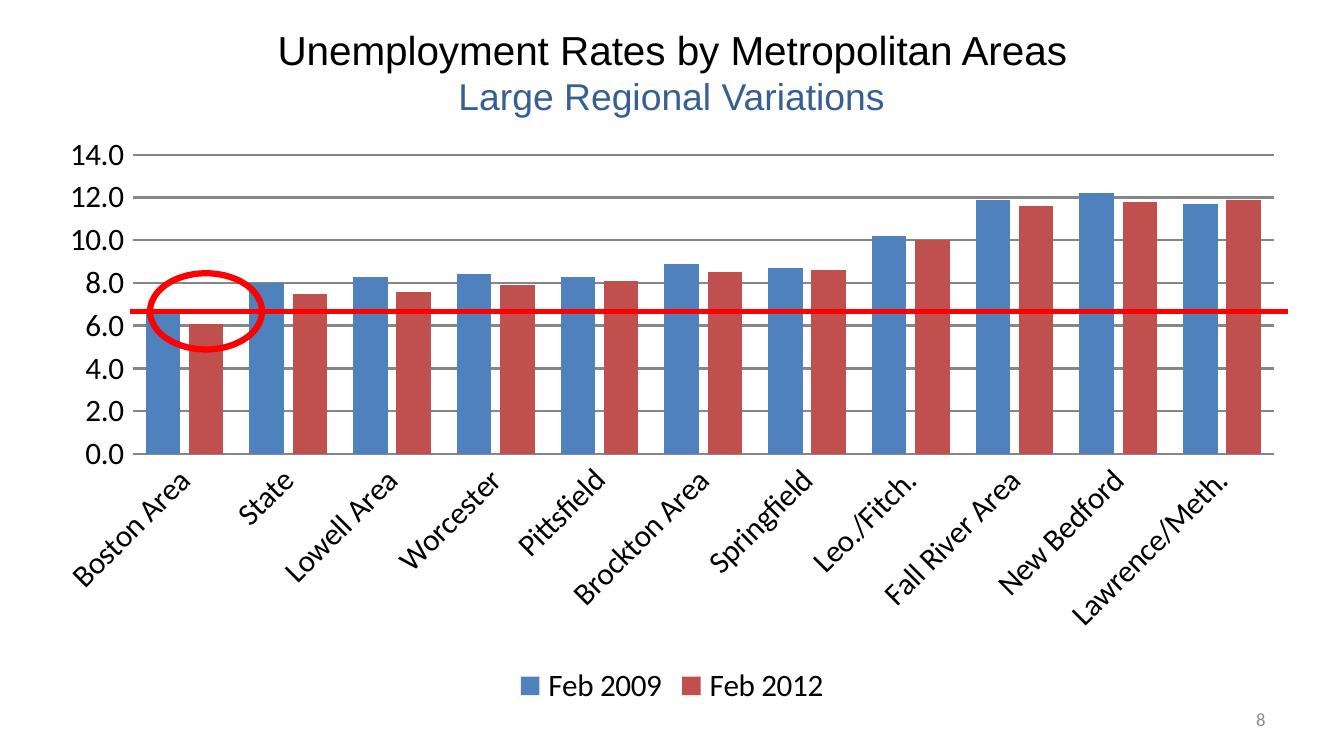
"""Build a slide comparing unemployment rates by metropolitan area."""
from lxml import etree
from pptx import Presentation
from pptx.chart.data import CategoryChartData as Data
from pptx.dml.color import RGBColor
from pptx.enum.chart import XL_CHART_TYPE as Kind, XL_LEGEND_POSITION as Spot
from pptx.enum.chart import XL_TICK_MARK as Tick
from pptx.enum.shapes import MSO_CONNECTOR as Link, MSO_SHAPE as Form
from pptx.enum.text import MSO_ANCHOR as Anchor, PP_ALIGN as Align
from pptx.oxml import parse_xml
from pptx.oxml.ns import nsdecls, qn
from pptx.util import Pt

SIZE = (432, 242.64)
TITLE = [("Unemployment Rates by Metropolitan Areas", 13, "000000"),
         ("Large Regional Variations", 12, "376092")]
PAGE = [("8", 6, "8C8C8C")]
RATES = [
    ("Boston Area", 6.8, 6.1),
    ("State", 8.0, 7.5),
    ("Lowell Area", 8.3, 7.6),
    ("Worcester", 8.4, 7.9),
    ("Pittsfield", 8.3, 8.1),
    ("Brockton Area", 8.9, 8.5),
    ("Springfield", 8.7, 8.6),
    ("Leo./Fitch.", 10.2, 10.0),
    ("Fall River Area", 11.9, 11.6),
    ("New Bedford", 12.2, 11.8),
    ("Lawrence/Meth.", 11.7, 11.9),
]
YEARS = [("Feb 2009", "4F81BD"), ("Feb 2012", "C0504D")]
PLOT = {"x": 0.07, "y": 0.05, "w": 0.91, "h": 0.51}
RED, GRID = "FF0000", "868686"


def color(hue):
    return RGBColor.from_string(hue)


def pts(*nums):
    return [Pt(num) for num in nums]


def stroke(line, hue, width):
    line.color.rgb = color(hue)
    line.width = Pt(width)


def style(font, face, size, hue):
    font.name, font.size = face, Pt(size)
    font.color.rgb = color(hue)


def write(slide, text, box, face="Calibri", align=Align.CENTER):
    frame = slide.shapes.add_textbox(*pts(*box)).text_frame
    frame.word_wrap = True
    frame.vertical_anchor = Anchor.MIDDLE
    frame.margin_left = frame.margin_right = Pt(3.6)
    frame.margin_top = frame.margin_bottom = Pt(2.16)
    para = frame.paragraphs[0]
    para.alignment = align
    for row, (words, size, hue) in enumerate(text):
        if row:
            para.add_line_break()
        run = para.add_run()
        run.text = words
        style(run.font, face, size, hue)


def place(chart):
    area = chart._chartSpace.chart.plotArea
    for old in area.findall(qn("c:layout")):
        area.remove(old)
    modes = '<c:layoutTarget val="inner"/><c:xMode val="edge"/><c:yMode val="edge"/>'
    sizes = "".join(f'<c:{key} val="{val}"/>' for key, val in PLOT.items())
    area.insert(0, parse_xml(
        f'<c:layout {nsdecls("c")}><c:manualLayout>{modes}{sizes}'
        '</c:manualLayout></c:layout>'))


def graph(slide, box):
    data = Data(number_format="0.0")
    names, *cols = zip(*RATES)
    data.categories = names
    for (name, _), vals in zip(YEARS, cols):
        data.add_series(name, vals)
    chart = slide.shapes.add_chart(Kind.COLUMN_CLUSTERED, *pts(*box), data).chart
    style(chart.font, "Calibri", 10, "000000")
    chart.has_title = False
    chart.has_legend = True
    chart.legend.position = Spot.BOTTOM
    chart.legend.include_in_layout = False
    plot = chart.plots[0]
    plot.gap_width, plot.overlap, plot.vary_by_categories = 75, -25, False
    for item, (_, hue) in zip(plot.series, YEARS):
        item.format.fill.solid()
        item.format.fill.fore_color.rgb = color(hue)
    cat, val = chart.category_axis, chart.value_axis
    for axis in (cat, val):
        axis.major_tick_mark = axis.minor_tick_mark = Tick.NONE
        style(axis.tick_labels.font, "Calibri", 10, "000000")
    stroke(cat.format.line, GRID, 0.75)
    cat._element.txPr.find(qn("a:bodyPr")).set("rot", "-2700000")
    val.minimum_scale, val.maximum_scale, val.major_unit = 0, 14, 2
    val.tick_labels.number_format = "#,##0.0"
    val.tick_labels.number_format_is_linked = False
    val.format.line.fill.background()
    val.has_major_gridlines = True
    stroke(val.major_gridlines.format.line, GRID, 0.75)
    place(chart)


def mark(slide, line, ring):
    rule = slide.shapes.add_connector(Link.STRAIGHT, *pts(*line))
    stroke(rule.line, RED, 1.5)
    etree.SubElement(rule._element.spPr, qn("a:effectLst"))
    oval = slide.shapes.add_shape(Form.OVAL, *pts(*ring))
    oval.shadow.inherit = False
    oval.fill.background()
    stroke(oval.line, RED, 2)


def main():
    deck = Presentation()
    deck.slide_width, deck.slide_height = pts(*SIZE)
    slide = deck.slides.add_slide(deck.slide_layouts[6])
    write(slide, TITLE, (21.6, 2.88, 388.8, 40.32), face="Arial")
    graph(slide, (14.4, 40.32, 403.2, 188.64))
    write(slide, PAGE, (309.6, 224.64, 100.8, 12.96), align=Align.RIGHT)
    mark(slide, (41.76, 100.08, 414, 100.08), (48.24, 87.84, 36, 24.48))
    deck.save("out.pptx")


if __name__ == "__main__":
    main()
